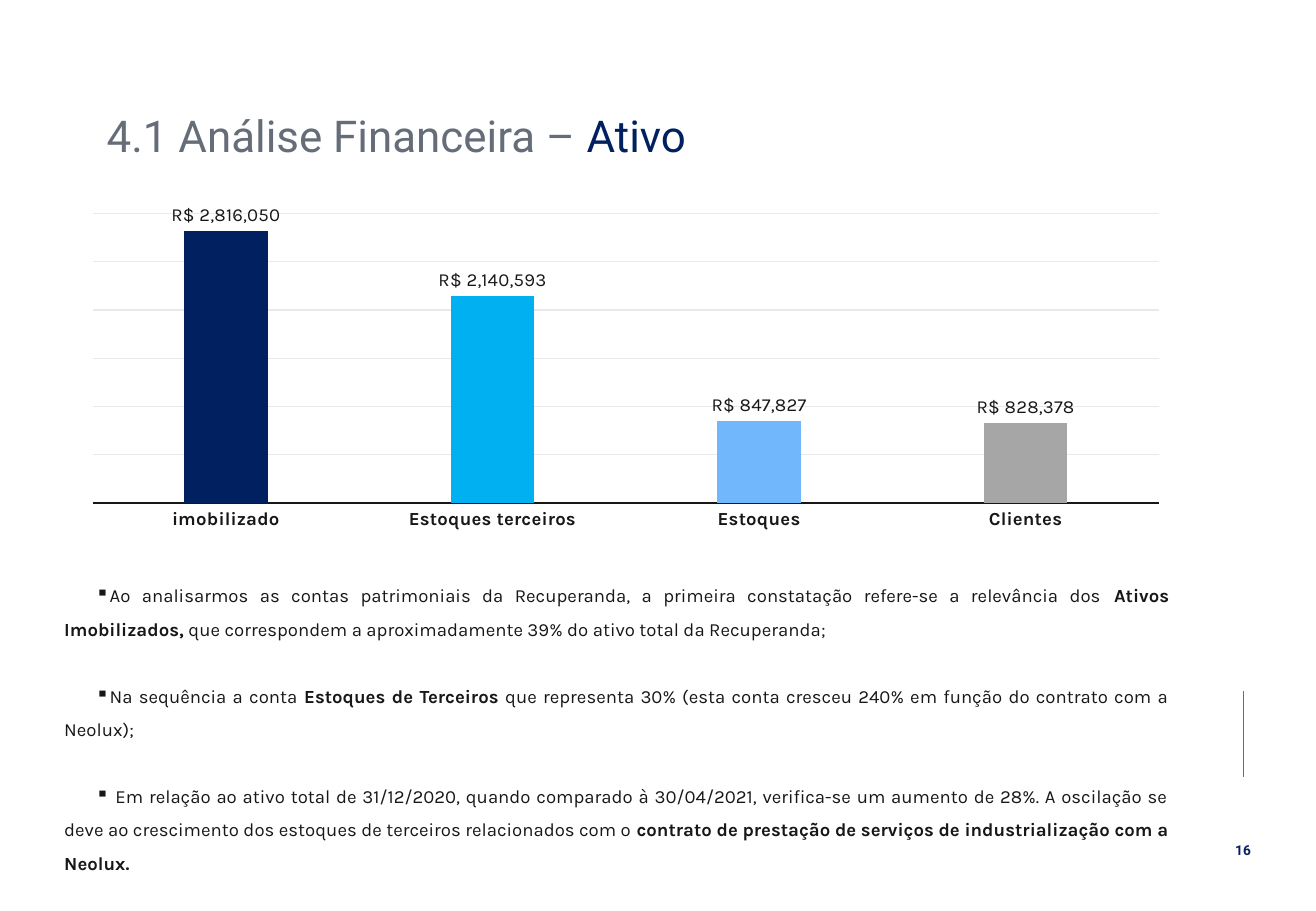
from typing import NamedTuple

from lxml import etree
from pptx import Presentation
from pptx.chart.data import CategoryChartData
from pptx.dml.color import RGBColor
from pptx.enum.chart import XL_CHART_TYPE, XL_LABEL_POSITION, XL_TICK_LABEL_POSITION, XL_TICK_MARK
from pptx.enum.shapes import MSO_CONNECTOR
from pptx.enum.text import MSO_ANCHOR, PP_ALIGN
from pptx.oxml.ns import qn
from pptx.util import Emu, Pt

COLUMN = XL_CHART_TYPE.COLUMN_CLUSTERED
OUTSIDE = XL_LABEL_POSITION.OUTSIDE_END
NO_LABEL = XL_TICK_LABEL_POSITION.NONE
NO_TICK = XL_TICK_MARK.NONE
STRAIGHT = MSO_CONNECTOR.STRAIGHT
TOP, MIDDLE = MSO_ANCHOR.TOP, MSO_ANCHOR.MIDDLE
LEFT, CENTER, JUSTIFY = PP_ALIGN.LEFT, PP_ALIGN.CENTER, PP_ALIGN.JUSTIFY

SCALE = 9144  # EMU per px, 100 px to the inch
MONEY = '"R$"\\ #,##0'
COLORS = {
    "ink": "181717", "gray": "656D78", "navy": "002060", "grid": "E7E9EB",
    "cyan": "00B0F0", "sky": "71B7FC", "silver": "A6A6A6",
}


class Box(NamedTuple):
    left: int
    top: int
    width: int
    height: int


class Bar(NamedTuple):
    name: str
    value: int
    color: str


class Span(NamedTuple):
    text: str
    bold: bool = False


BARS = [
    Bar("imobilizado", 2816050, "navy"),
    Bar("Estoques terceiros", 2140593, "cyan"),
    Bar("Estoques", 847827, "sky"),
    Bar("Clientes", 828378, "silver"),
]
NOTES = [
    [Span("Ao analisarmos as contas patrimoniais da Recuperanda, a primeira "
          "constatação refere-se a relevância dos "),
     Span("Ativos Imobilizados,", True),
     Span(" que correspondem a aproximadamente 39% do ativo total da Recuperanda;")],
    [Span("Na sequência a conta "),
     Span("Estoques de Terceiros", True),
     Span(" que representa 30% (esta conta cresceu 240% em função do contrato "
          "com a Neolux);")],
    [Span(" Em relação ao ativo total de 31/12/2020, quando comparado à 30/04/2021, "
          "verifica-se um aumento de 28%. A oscilação se deve ao crescimento dos "
          "estoques de terceiros relacionados com o "),
     Span("contrato de prestação de serviços de industrialização com a Neolux.", True)],
]


def px(size: int) -> Emu:
    return Emu(size * SCALE)


def rgb(name: str) -> RGBColor:
    return RGBColor.from_string(COLORS[name])


def set_font(font, face: str, size: float, color: str, bold: bool = False) -> None:
    font.name, font.size, font.bold = face, Pt(size), bold
    font.color.rgb = rgb(color)


def set_line(line, color: str, width: float) -> None:
    line.color.rgb = rgb(color)
    line.width = Pt(width)


def add_box(slide, box: Box, wrap: bool = True, anchor=TOP):
    frame = slide.shapes.add_textbox(*map(px, box)).text_frame
    frame.word_wrap = wrap
    frame.vertical_anchor = anchor
    return frame


def add_title(slide) -> None:
    line = add_box(slide, Box(78, 87, 818, 53), anchor=MIDDLE).paragraphs[0]
    line.alignment, line.line_spacing = LEFT, 0.9
    set_font(line.font, "Roboto", 26, "gray")
    line.add_run().text = "4.1 Análise Financeira – "
    topic = line.add_run()
    topic.text = "Ativo"
    topic.font.color.rgb = rgb("navy")


def add_chart(slide) -> None:
    data = CategoryChartData(number_format=MONEY)
    data.categories = [bar.name for bar in BARS]
    data.add_series("Ativo", [bar.value for bar in BARS])
    chart = slide.shapes.add_chart(COLUMN, *map(px, Box(58, 168, 914, 274)), data).chart
    chart.has_legend = chart.has_title = False
    set_font(chart.font, "Karla", 11, "ink")

    cats = chart.category_axis
    cats.major_tick_mark = cats.minor_tick_mark = NO_TICK
    set_font(cats.tick_labels.font, "Karla", 11, "ink", True)
    set_line(cats.format.line, "ink", 0.75)

    vals = chart.value_axis
    vals.visible = False
    vals.tick_label_position = NO_LABEL
    vals.minimum_scale, vals.maximum_scale, vals.major_unit = 0, 3000000, 500000
    set_line(vals.major_gridlines.format.line, "grid", 0.75)

    plot = chart.plots[0]
    plot.gap_width, plot.overlap = 219, -27
    plot.vary_by_categories = False
    plot.has_data_labels = True
    labels = plot.data_labels
    labels.show_value = True
    labels.position = OUTSIDE
    labels.number_format, labels.number_format_is_linked = MONEY, False
    set_font(labels.font, "Karla", 11, "ink")
    for index, bar in enumerate(BARS):
        fill = plot.series[0].points[index].format.fill
        fill.solid()
        fill.fore_color.rgb = rgb(bar.color)


def add_notes(slide) -> None:
    frame = add_box(slide, Box(43, 467, 929, 258))
    for index, spans in enumerate(NOTES):
        para = frame.add_paragraph() if index else frame.paragraphs[0]
        props = para._p.get_or_add_pPr()
        props.set("marL", "0")
        props.set("indent", str(px(26)))
        etree.SubElement(props, qn("a:buChar")).set("char", "▪")
        para.alignment, para.line_spacing = JUSTIFY, 1.5
        para.space_before = Pt(19.8 if index else 0)
        set_font(para.font, "Karla", 11, "ink")
        for span in spans:
            run = para.add_run()
            run.text = span.text
            if span.bold:
                run.font.bold = True


def add_footer(slide) -> None:
    """Draw the page number and the rule above it."""
    rule = slide.shapes.add_connector(STRAIGHT, *map(px, (1023, 569, 1023, 640)))
    set_line(rule.line, "gray", 0.5)
    etree.SubElement(rule._element.spPr, qn("a:effectLst"))
    page = add_box(slide, Box(1006, 688, 34, 24), wrap=False).paragraphs[0]
    page.text = "16"
    page.alignment = CENTER
    set_font(page.font, "Roboto", 8.1, "navy", True)


def main() -> None:
    deck = Presentation()
    deck.slide_width, deck.slide_height = px(1083), px(750)
    slide = deck.slides.add_slide(deck.slide_layouts[6])
    add_footer(slide)
    add_title(slide)
    add_notes(slide)
    add_chart(slide)
    deck.save("out.pptx")


if __name__ == "__main__":
    main()
